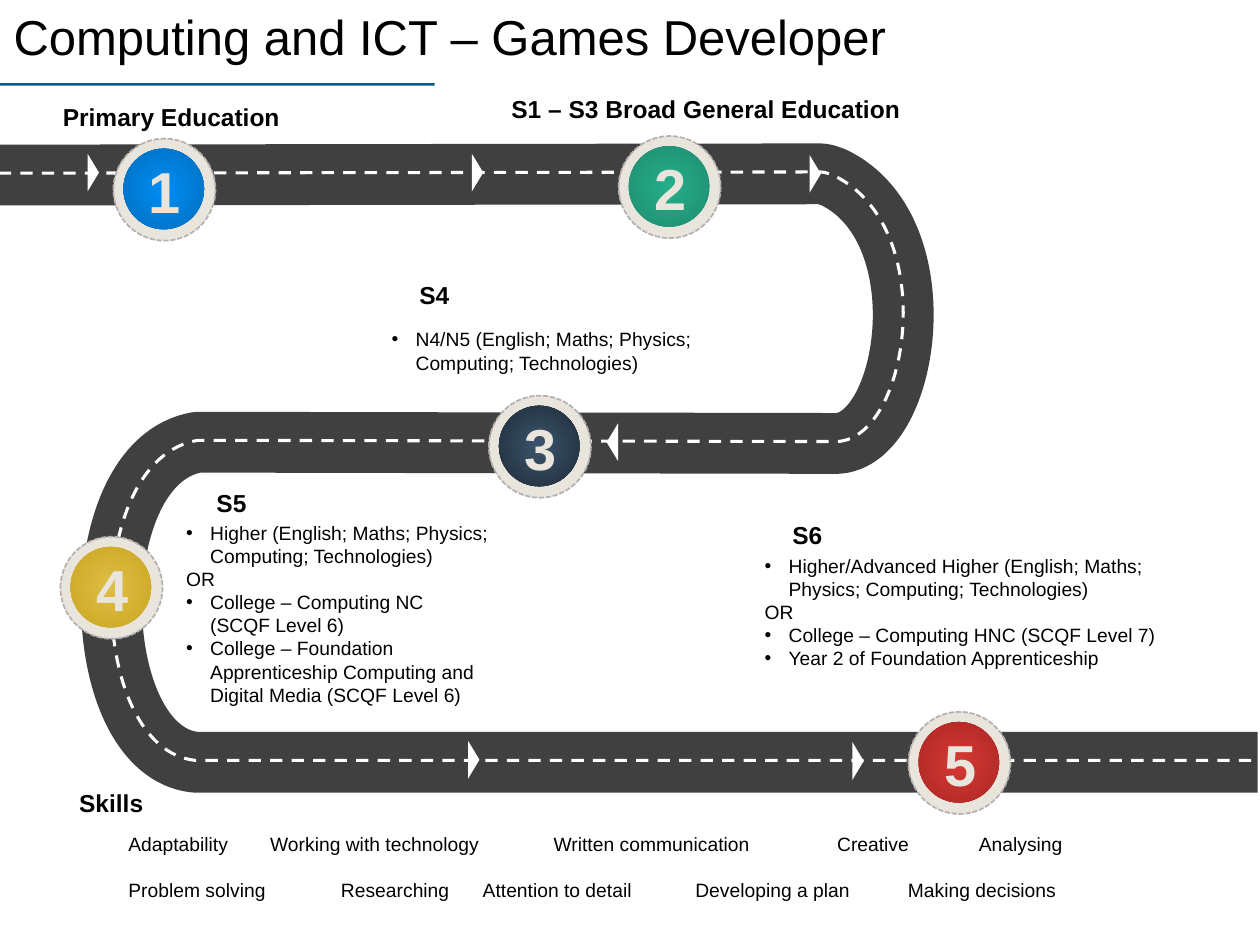
from lxml import etree
from pptx import Presentation
from pptx.dml.color import RGBColor
from pptx.enum.dml import MSO_LINE
from pptx.enum.shapes import MSO_SHAPE
from pptx.enum.text import MSO_ANCHOR, PP_ALIGN
from pptx.oxml.ns import qn
from pptx.util import Inches, Pt

OVAL = MSO_SHAPE.OVAL
RECTANGLE = MSO_SHAPE.RECTANGLE
TRIANGLE = MSO_SHAPE.ISOSCELES_TRIANGLE
DASH = MSO_LINE.DASH
SHORT_DASH = MSO_LINE.SQUARE_DOT
MIDDLE = MSO_ANCHOR.MIDDLE
CENTER = PP_ALIGN.CENTER

FONT = "Arial"
COLORS = {"text": "000000", "rule": "015D82", "road": "404040", "marking": "FFFFFF",
          "ring": "E9E5DC", "ring edge": "B5B1B1"}
TAB_STEP = 0.5625
BULLET_INDENT = 0.19

# A road piece is one end point (straight) or two handles and an end point (curve).
ROAD_START = (-0.01, 1.39)
ROAD_PIECES = [
    [(6.51, 1.38)],
    [(6.55, 1.38), (6.59, 1.40), (6.62, 1.41)],
    [(7.48, 1.83), (7.21, 3.54), (6.62, 3.52)],
    [(1.57, 3.51)],
    [(0.64, 3.66), (0.68, 5.96), (1.55, 6.05)],
    [(9.98, 6.05)],
]
# Centre and rotation
ARROWS = [(0.74, 1.37, 90), (3.79, 1.37, 90), (6.47, 1.38, 90),
          (4.86, 3.51, 270), (3.76, 6.03, 90), (6.81, 6.04, 90)]
# Number, left, top, inner and outer gradient colour
BADGES = [("1", 0.90, 1.10, "008DF6", "0070C0"),
          ("2", 4.91, 1.08, "25AD89", "1F9072"),
          ("3", 3.88, 3.14, "3B556D", "202E3B"),
          ("4", 0.48, 4.26, "DFBE45", "CBA723"),
          ("5", 7.21, 5.65, "D63A36", "AE2724")]
HEADINGS = [("Primary Education", 0.40, 0.76, 2.05),
            ("S1 – S3 Broad General Education", 3.96, 0.69, 3.44),
            ("S4", 3.23, 2.17, 3.08),
            ("S5", 1.62, 3.82, 2.43),
            ("S6", 6.19, 4.07, 2.38),
            ("Skills", 0.53, 6.20, 1.47)]
STAGE_LISTS = [
    ((3.01, 2.55, 3.35, 0.47),
     ["N4/N5 (English; Maths; Physics; Computing; Technologies)"]),
    ((1.38, 4.08, 2.60, 1.58),
     ["Higher (English; Maths; Physics; Computing; Technologies)",
      "OR",
      "College – Computing NC (SCQF Level 6)",
      "College – Foundation Apprenticeship Computing and Digital Media (SCQF Level 6)"]),
    ((5.97, 4.34, 3.55, 1.03),
     ["Higher/Advanced Higher (English; Maths; Physics; Computing; Technologies)",
      "OR",
      "College – Computing HNC (SCQF Level 7)",
      "Year 2 of Foundation Apprenticeship"]),
]
SKILLS = ["Adaptability\tWorking with technology\t\tWritten communication\t\tCreative\tAnalysing",
          "Problem solving\t\tResearching\tAttention to detail\tDeveloping a plan\tMaking decisions"]


def rgb(name):
    return RGBColor.from_string(COLORS.get(name, name))


def add_text(slide, box, lines, size, bold=False, color="text"):
    """Add a vertically centred text box with one paragraph per line."""
    shape = slide.shapes.add_textbox(*map(Inches, box))
    frame = shape.text_frame
    frame.text = "\n".join(lines)
    frame.word_wrap = True
    frame.vertical_anchor = MIDDLE
    for paragraph in frame.paragraphs:
        for run in paragraph.runs:
            run.font.name = FONT
            run.font.size = Pt(size)
            run.font.bold = bold
            run.font.color.rgb = rgb(color)
    return frame


def add_filled(slide, kind, box, color):
    shape = slide.shapes.add_shape(kind, *map(Inches, box))
    shape.shadow.inherit = False
    shape.fill.solid()
    shape.fill.fore_color.rgb = rgb(color)
    shape.line.fill.background()
    return shape


def add_stage_list(slide, box, lines):
    for paragraph in add_text(slide, box, lines, 11).paragraphs:
        if paragraph.text == "OR":
            continue
        properties = paragraph._p.get_or_add_pPr()
        properties.set("marL", str(Inches(BULLET_INDENT)))
        properties.set("indent", str(-Inches(BULLET_INDENT)))
        etree.SubElement(properties, qn("a:buFont"), typeface=FONT)
        etree.SubElement(properties, qn("a:buChar"), char="•")


def add_skills(slide):
    frame = add_text(slide, (0.92, 6.55, 8.38, 0.66), SKILLS, 11)
    frame.paragraphs[1].space_before = Pt(13)
    for paragraph in frame.paragraphs:
        tabs = etree.SubElement(paragraph._p.get_or_add_pPr(), qn("a:tabLst"))
        for stop in range(1, 14):
            etree.SubElement(tabs, qn("a:tab"), pos=str(Inches(stop * TAB_STEP)), algn="l")


def bend_curves(shape):
    """Turn each three straight segments that stand for a curve into one Bézier segment."""
    segments = iter(list(shape._element.iter(qn("a:lnTo"))))
    for piece in ROAD_PIECES:
        first, *others = [next(segments) for _ in piece]
        if others:
            first.tag = qn("a:cubicBezTo")
            for segment in others:
                first.append(segment[0])
                segment.getparent().remove(segment)


def add_road_line(slide, color, width, rise=0, dash=None):
    points = [ROAD_START] + [point for piece in ROAD_PIECES for point in piece]
    points = [(Inches(x), Inches(y - rise)) for x, y in points]
    builder = slide.shapes.build_freeform(*points[0])
    builder.add_line_segments(points[1:], close=False)
    shape = builder.convert_to_shape()
    bend_curves(shape)
    shape.shadow.inherit = False
    shape.fill.background()
    shape.line.color.rgb = rgb(color)
    shape.line.width = Pt(width)
    if dash:
        shape.line.dash_style = dash


def add_arrow(slide, center_x, center_y, rotation):
    width, height = 0.30, 0.09
    box = (center_x - width / 2, center_y - height / 2, width, height)
    add_filled(slide, TRIANGLE, box, "marking").rotation = rotation


def set_radial_gradient(shape, inner, outer):
    shape.fill.gradient()
    for stop, color, position in zip(shape.fill.gradient_stops, (inner, outer), (0, 0.93)):
        stop.color.rgb = rgb(color)
        stop.position = position
    gradient = shape._element.spPr.find(qn("a:gradFill"))
    gradient.remove(gradient.find(qn("a:lin")))
    circle = etree.SubElement(gradient, qn("a:path"))
    circle.set("path", "circle")
    etree.SubElement(circle, qn("a:fillToRect"), l="50000", t="50000", r="50000", b="50000")


def add_badge(slide, number, left, top, inner, outer):
    ring = add_filled(slide, OVAL, (left, top, 0.81, 0.81), "ring")
    ring.line.color.rgb = rgb("ring edge")
    ring.line.width = Pt(1)
    ring.line.dash_style = SHORT_DASH
    disc = add_filled(slide, OVAL, (left + 0.08, top + 0.08, 0.64, 0.64), inner)
    set_radial_gradient(disc, inner, outer)
    frame = add_text(slide, (left + 0.18, top + 0.08, 0.46, 0.66), [number], 33, True, "ring")
    frame.paragraphs[0].alignment = CENTER
    frame.word_wrap = False


def main():
    presentation = Presentation()
    presentation.slide_width = Inches(10)
    presentation.slide_height = Inches(7.5)
    slide = presentation.slides.add_slide(presentation.slide_layouts[6])

    add_text(slide, (0.01, 0, 9.51, 0.57), ["Computing and ICT – Games Developer"], 28)
    add_filled(slide, RECTANGLE, (0, 0.66, 3.45, 0.02), "rule")
    for heading, left, top, width in HEADINGS:
        add_text(slide, (left, top, width, 0.34), [heading], 14, bold=True)
    for box, lines in STAGE_LISTS:
        add_stage_list(slide, box, lines)
    add_skills(slide)
    add_road_line(slide, "road", 34.75)
    add_road_line(slide, "marking", 1.75, rise=0.015, dash=DASH)
    for arrow in ARROWS:
        add_arrow(slide, *arrow)
    for badge in BADGES:
        add_badge(slide, *badge)

    presentation.save("out.pptx")


if __name__ == "__main__":
    main()
